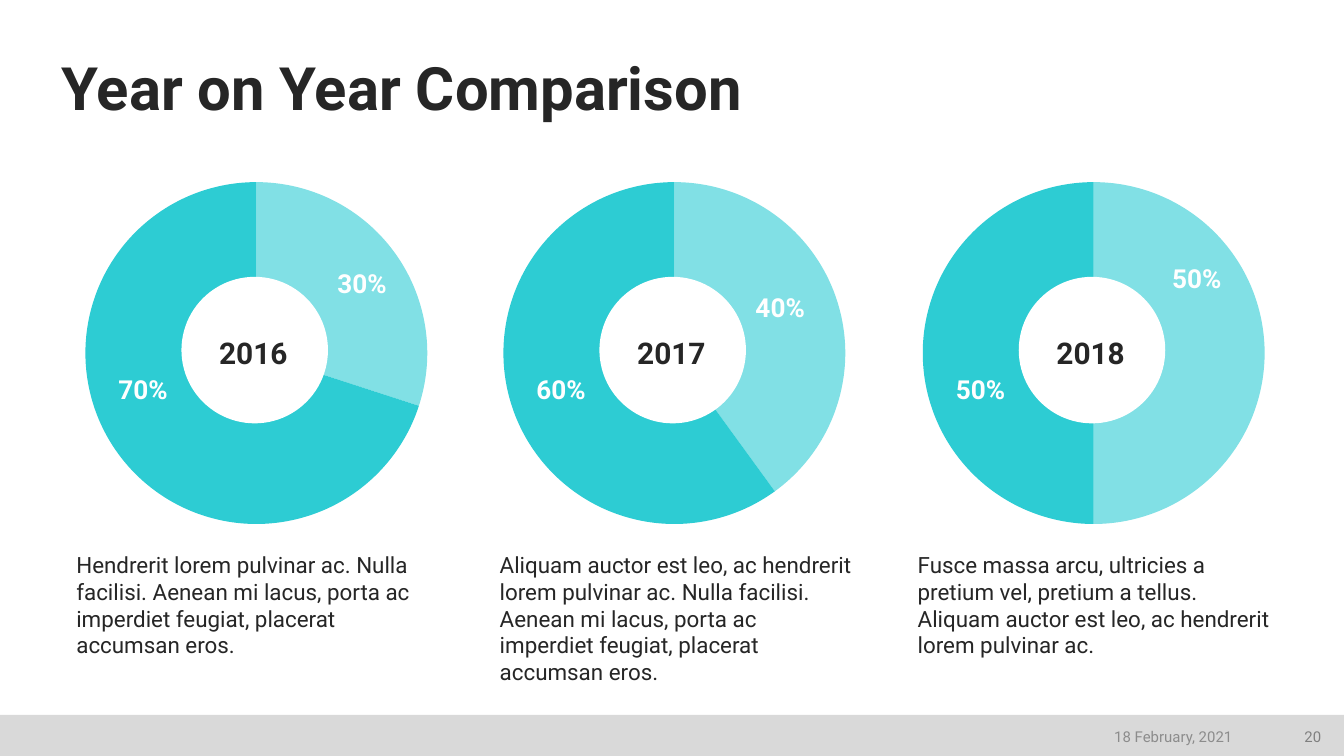
import pptx
import pptx.chart.data
import pptx.dml.color
import pptx.enum.chart
import pptx.enum.shapes
import pptx.enum.text
import pptx.oxml
import pptx.util
from pptx.util import Inches

COLORS = {
    "ink": "262626",
    "white": "FFFFFF",
    "light": "81E0E5",
    "dark": "2DCCD3",
    "bar": "D9D9D9",
    "date": "8C8C8C",
    "number": "808080",
}
ALIGN = pptx.enum.text.PP_ALIGN
ANCHOR = pptx.enum.text.MSO_ANCHOR
OVAL = pptx.enum.shapes.MSO_SHAPE.OVAL
RECTANGLE = pptx.enum.shapes.MSO_SHAPE.RECTANGLE

# Year, chart left, light share, dark share, light label (left, top, width),
# text left, text
years = [
    ("2016", 0.61, 30, 70, (2.41, 1.99, 0.57), 0.47,
     "Hendrerit lorem pulvinar ac. Nulla facilisi. Aenean mi lacus, porta ac "
     "imperdiet feugiat, placerat accumsan eros."),
    ("2017", 3.72, 40, 60, (5.46, 2.17, 0.69), 3.62,
     "Aliquam auctor est leo, ac hendrerit lorem pulvinar ac. Nulla facilisi. "
     "Aenean mi lacus, porta ac imperdiet feugiat, placerat accumsan eros."),
    ("2018", 6.84, 50, 50, (8.59, 1.95, 0.63), 6.73,
     "Fusce massa arcu, ultricies a pretium vel, pretium a tellus. "
     "Aliquam auctor est leo, ac hendrerit lorem pulvinar ac."),
]

# A 16:9 slide
presentation = pptx.Presentation()
presentation.slide_width = Inches(10)
presentation.slide_height = Inches(10 * 9 / 16)
slide = presentation.slides.add_slide(presentation.slide_layouts[5])


def add_text(left, top, width, height, text, size, color, bold=False,
             align=ALIGN.LEFT, anchor=ANCHOR.TOP, inset=True):
    box = slide.shapes.add_textbox(Inches(left), Inches(top), Inches(width), Inches(height))
    frame = box.text_frame
    frame.word_wrap = True
    frame.vertical_anchor = anchor
    if not inset:
        frame.margin_left = frame.margin_right = frame.margin_top = frame.margin_bottom = 0
    paragraph = frame.paragraphs[0]
    paragraph.text = text
    paragraph.alignment = align
    paragraph.font.name = "Roboto"
    paragraph.font.size = pptx.util.Pt(size)
    paragraph.font.bold = bold
    paragraph.font.color.rgb = pptx.dml.color.RGBColor.from_string(COLORS[color])


def add_plain_shape(kind, left, top, width, height, color):
    shape = slide.shapes.add_shape(kind, Inches(left), Inches(top), Inches(width), Inches(height))
    shape.shadow.inherit = False
    shape.fill.solid()
    shape.fill.fore_color.rgb = pptx.dml.color.RGBColor.from_string(COLORS[color])
    shape.line.fill.background()


# Footer bar
add_plain_shape(RECTANGLE, 0, 5.32, 10, 0.31, "bar")

# Title
title = slide.shapes.title
title.left, title.top = Inches(0.46), Inches(0.4)
title.width, title.height = Inches(9.1), Inches(0.52)
frame = title.text_frame
frame.margin_left = frame.margin_right = frame.margin_top = frame.margin_bottom = 0
frame.auto_size = pptx.enum.text.MSO_AUTO_SIZE.NONE
frame.vertical_anchor = ANCHOR.BOTTOM
paragraph = frame.paragraphs[0]
paragraph.text = "Year on Year Comparison"
paragraph.alignment = ALIGN.LEFT
paragraph.line_spacing = 0.9
paragraph.font.name = "Roboto"
paragraph.font.size = pptx.util.Pt(32)
paragraph.font.bold = True
paragraph.font.color.rgb = pptx.dml.color.RGBColor.from_string(COLORS["ink"])

# One ring, its labels and its text for each year
for year, left, light, dark, light_label, text_left, text in years:
    chart_data = pptx.chart.data.CategoryChartData()
    chart_data.categories = ["1", "2"]
    chart_data.add_series("Series 1", (light, dark))
    chart = slide.shapes.add_chart(
        pptx.enum.chart.XL_CHART_TYPE.PIE,
        Inches(left), Inches(1.33), Inches(2.57), Inches(2.57), chart_data).chart
    chart.has_legend = False
    chart.has_title = False
    chart.font.name = "Roboto"
    chart.font.size = pptx.util.Pt(10)
    plot = chart.plots[0]
    plot.vary_by_categories = True
    for number, color in enumerate(("light", "dark")):
        point = plot.series[0].points[number]
        point.format.fill.solid()
        point.format.fill.fore_color.rgb = pptx.dml.color.RGBColor.from_string(COLORS[color])
        point.format.line.fill.background()

    # Let the pie fill the chart frame
    plot_area = chart.element.chart.plotArea
    for old_layout in plot_area.xpath("c:layout"):
        plot_area.remove(old_layout)
    plot_area.insert(0, pptx.oxml.parse_xml(
        '<c:layout xmlns:c="http://schemas.openxmlformats.org/drawingml/2006/chart">'
        '<c:manualLayout><c:layoutTarget val="inner"/>'
        '<c:xMode val="edge"/><c:yMode val="edge"/>'
        '<c:x val="0.01"/><c:y val="0.01"/><c:w val="0.99"/><c:h val="0.99"/>'
        '</c:manualLayout></c:layout>'))

    add_plain_shape(OVAL, left + 0.74, 2.06, 1.09, 1.09, "white")
    label_left, label_top, label_width = light_label
    add_text(label_left, label_top, label_width, 0.32, f"{light}%", 14, "white", True,
             ALIGN.CENTER, inset=False)
    add_text(left + 0.15, 2.78, 0.61, 0.27, f"{dark}%", 14, "white", True,
             ALIGN.CENTER, inset=False)
    add_text(left + 0.97, 2.49, 0.61, 0.27, year, 16, "ink", True,
             ALIGN.CENTER, inset=False)
    add_text(text_left, 4.05, 2.83, 1.03, text, 12, "ink")

# Footer text
add_text(9.56, 5.35, 0.37, 0.26, "20", 8, "number", align=ALIGN.RIGHT, anchor=ANCHOR.MIDDLE)
add_text(7.02, 5.35, 2.25, 0.26, "18 February, 2021", 8, "date",
         align=ALIGN.RIGHT, anchor=ANCHOR.MIDDLE)

presentation.save("out.pptx")
